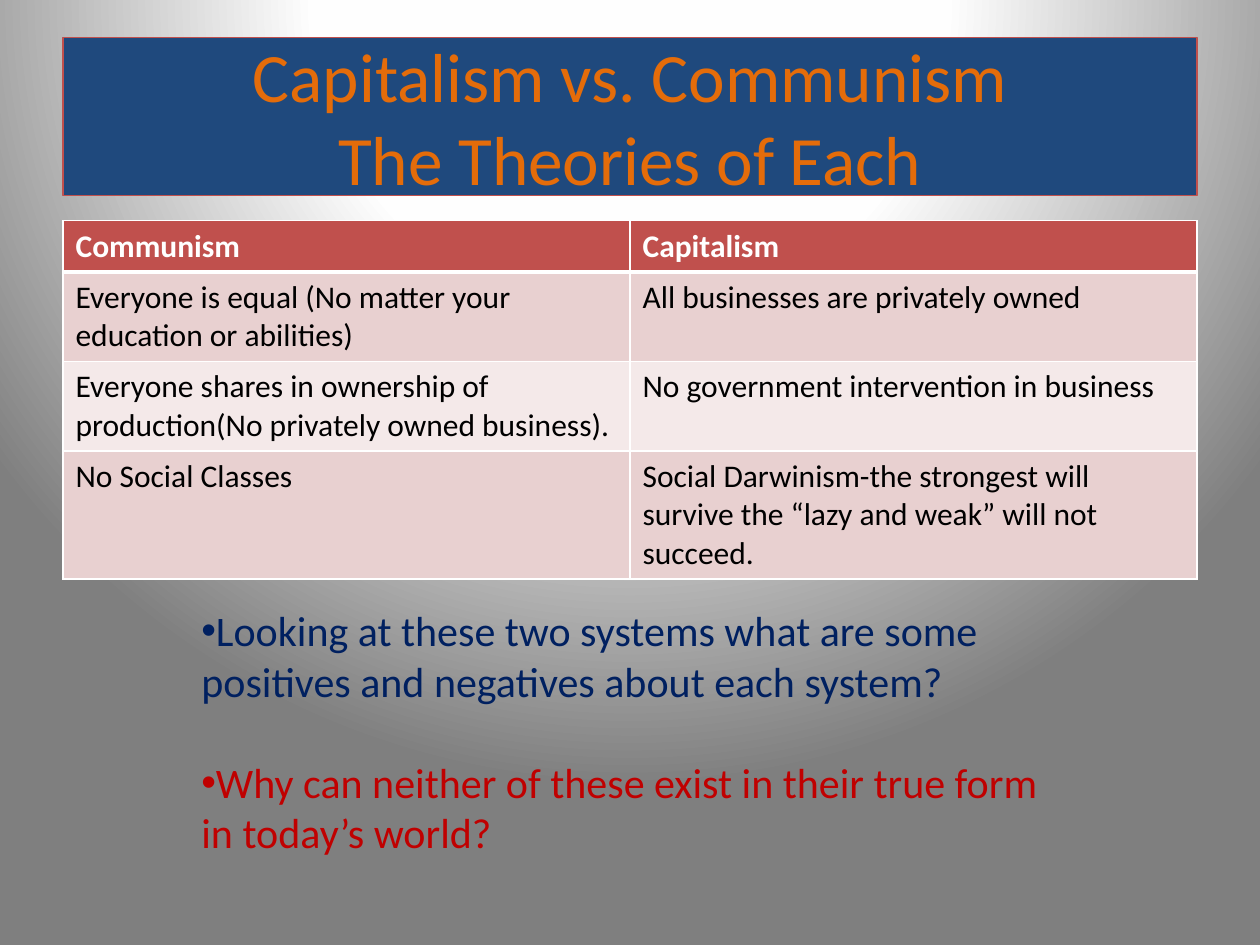
from lxml import etree
from pptx import Presentation
from pptx import util as u
from pptx.dml.color import RGBColor
from pptx.enum import shapes, text
from pptx.oxml.ns import qn

NAVY = RGBColor(0x1F, 0x49, 0x7D)
ORANGE = RGBColor(0xE4, 0x6C, 0x0A)
RED = RGBColor(0xC0, 0x50, 0x4D)
PINK = RGBColor(0xE8, 0xD0, 0xD0)
PALE = RGBColor(0xF4, 0xE9, 0xE9)
WHITE = RGBColor(0xFF, 0xFF, 0xFF)
BLACK = RGBColor(0, 0, 0)
DARK_BLUE = RGBColor(0x00, 0x20, 0x60)
DARK_RED = RGBColor(0xC0, 0, 0)


def write(para, words, size=18, color=BLACK, bold=False, align=text.PP_ALIGN.LEFT):
    """Fill a paragraph, turning each newline into a line break."""
    para.alignment = align
    for index, line in enumerate(words.split("\n")):
        if index:
            para.add_line_break()
        span = para.add_run()
        span.text = line
        span.font.name = "Calibri"
        span.font.size = u.Pt(size)
        span.font.bold = bold
        span.font.color.rgb = color


def add_border(cell, side, points):
    props = cell._tc.get_or_add_tcPr()
    line = etree.SubElement(props, qn(f"a:ln{side}"), w=str(u.Pt(points)))
    fill = etree.SubElement(line, qn("a:solidFill"))
    etree.SubElement(fill, qn("a:srgbClr"), val=str(WHITE))


deck = Presentation()
deck.slide_width, deck.slide_height = u.Cm(25.4), u.Cm(19.05)
page = deck.slides.add_slide(deck.slide_layouts[6])

# Background: a round gradient centred above the page
page.background.fill.gradient()
gradient = page.element.find(".//" + qn("a:gradFill"))
for child in list(gradient):
    gradient.remove(child)
stops = etree.SubElement(gradient, qn("a:gsLst"))
for percent, color in ((0, "FFFFFF"), (40, "FEFEFE"), (100, "7F7F7F")):
    stop = etree.SubElement(stops, qn("a:gs"), pos=str(percent * 1000))
    etree.SubElement(stop, qn("a:srgbClr"), val=color)
circle = etree.SubElement(gradient, qn("a:path"), path="circle")
etree.SubElement(circle, qn("a:fillToRect"), l="50000", t="-80000", r="50000", b="180000")

# Title
title = page.shapes.add_shape(
    shapes.MSO_SHAPE.RECTANGLE, u.Cm(1.27), u.Cm(0.76), u.Cm(22.86), u.Cm(3.18))
title.shadow.inherit = False
title.fill.solid()
title.fill.fore_color.rgb = NAVY
title.line.color.rgb = RED
title.line.width = u.Pt(0.75)
title.text_frame.word_wrap = True
title.text_frame.vertical_anchor = text.MSO_ANCHOR.MIDDLE
write(title.text_frame.paragraphs[0], "Capitalism vs. Communism\nThe Theories of Each",
      size=39.6, color=ORANGE, align=text.PP_ALIGN.CENTER)

# Comparison table
rows = [
    ("Communism", "Capitalism"),
    ("Everyone is equal (No matter your education or abilities)",
     "All businesses are privately owned"),
    ("Everyone shares in ownership of production(No privately owned business).",
     "No government intervention in business"),
    ("No Social Classes",
     "Social Darwinism-the strongest will survive the “lazy and weak” will not succeed."),
]
heights = (1.03, 1.8, 1.8, 2.5)
fills = (RED, PINK, PALE, PINK)
table = page.shapes.add_table(
    len(rows), 2, u.Cm(1.27), u.Cm(4.45), u.Cm(22.86), u.Cm(sum(heights))).table
for r, (row, height, fill) in enumerate(zip(rows, heights, fills)):
    table.rows[r].height = u.Cm(height)
    header = r == 0
    for c, words in enumerate(row):
        cell = table.cell(r, c)
        for side in "LRTB":
            heavy = (header and side == "B") or (r == 1 and side == "T")
            add_border(cell, side, 3 if heavy else 1)
        cell.fill.solid()
        cell.fill.fore_color.rgb = fill
        write(cell.text_frame.paragraphs[0], words,
              color=WHITE if header else BLACK, bold=header)

# Discussion questions
questions = [
    ("Looking at these two systems what are some positives and negatives about each system?",
     DARK_BLUE),
    ("Why can neither of these exist in their true form in today’s world?", DARK_RED),
]
box = page.shapes.add_textbox(u.Cm(3.81), u.Cm(12.07), u.Cm(17.58), u.Cm(6.15))
frame = box.text_frame
frame.word_wrap = True
for index, (question, color) in enumerate(questions):
    para = frame.add_paragraph() if index else frame.paragraphs[0]
    write(para, question, size=24, color=color)
    if index:
        para.space_before = u.Pt(29)
    props = para._p.get_or_add_pPr()
    etree.SubElement(props, qn("a:buFont"), typeface="Arial")
    etree.SubElement(props, qn("a:buChar"), char="•")

deck.save("out.pptx")
